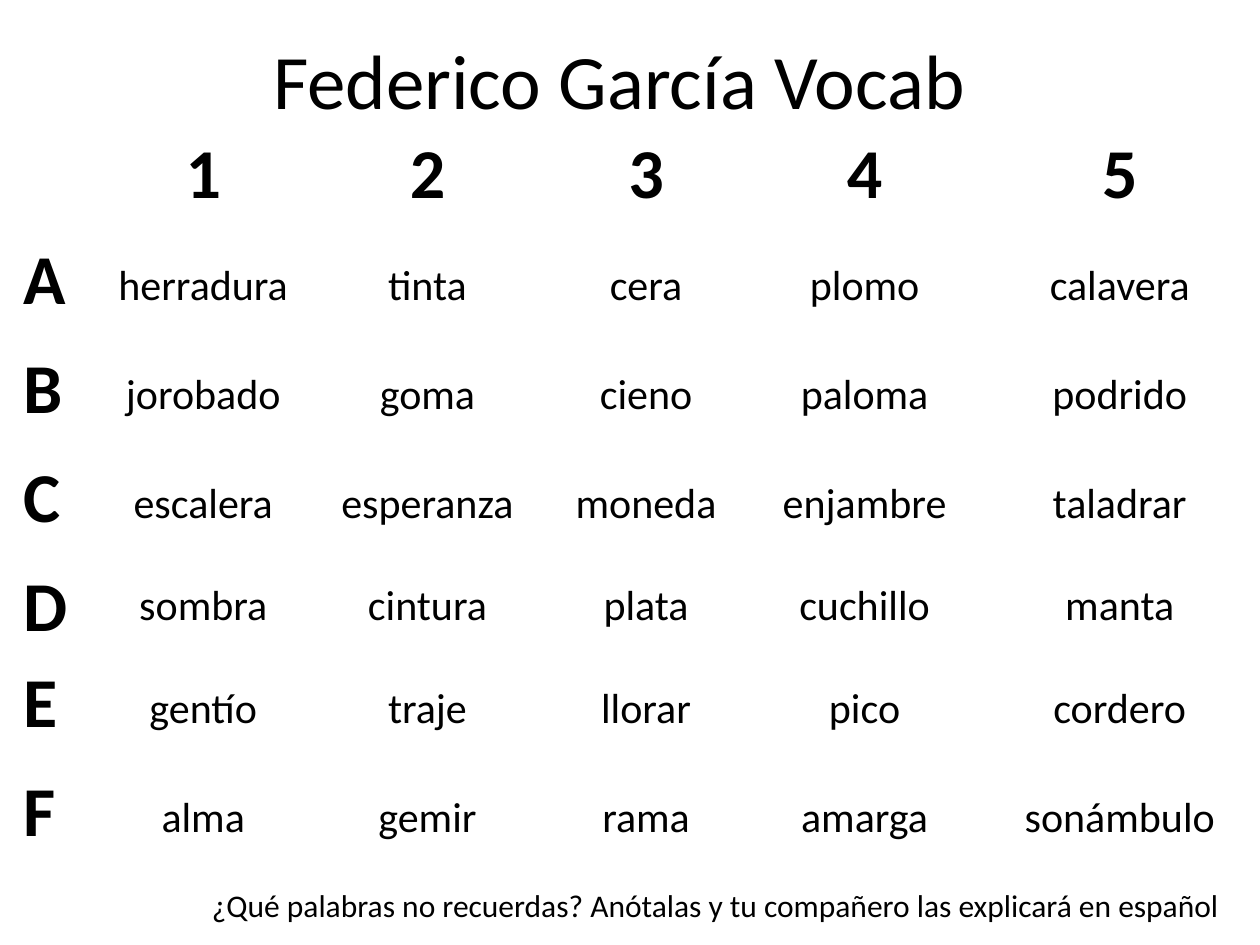
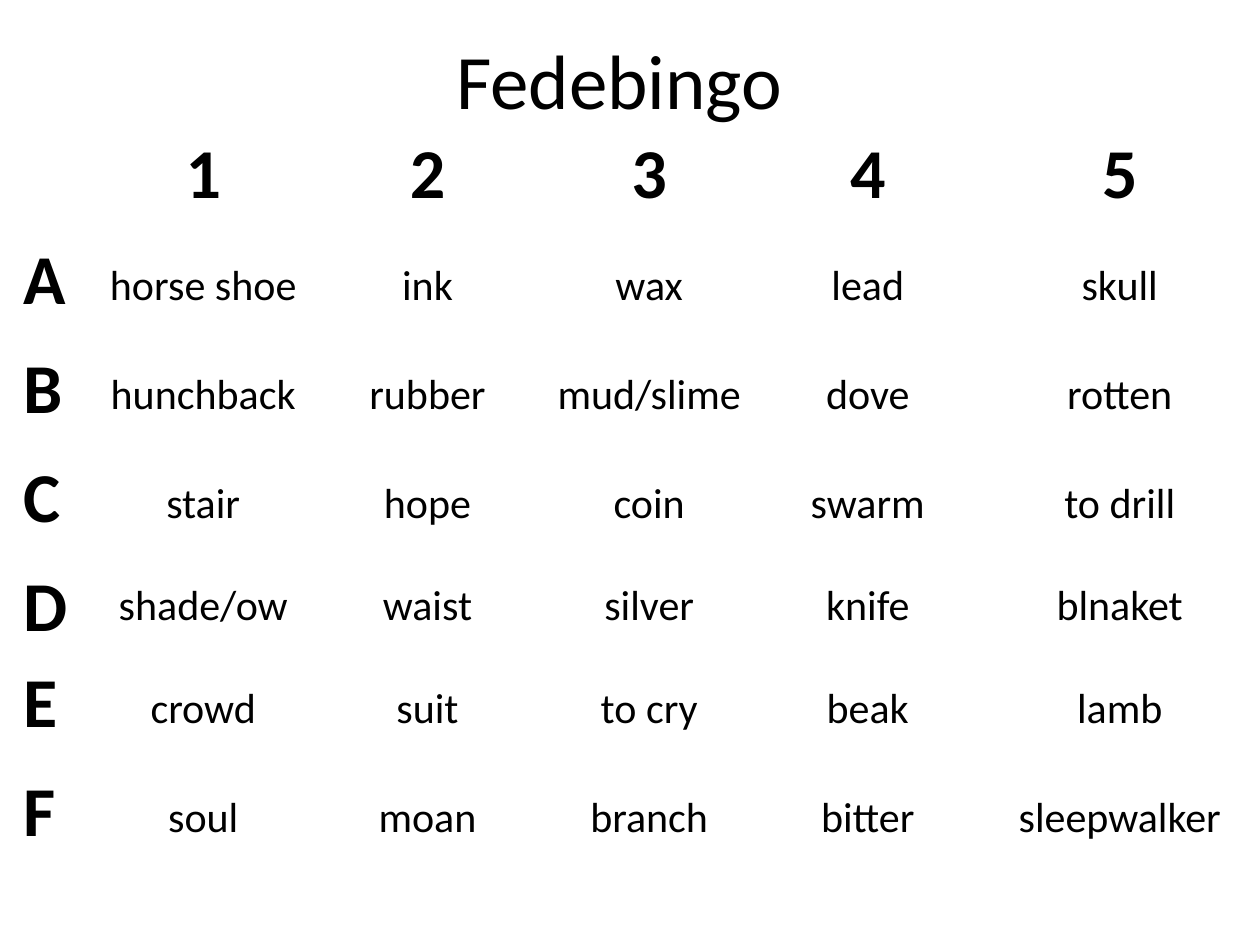
from pptx import Presentation
from pptx.dml.color import RGBColor
from pptx.enum import text
from pptx.util import Pt

COLORS = {"ink": "000000"}
FONT = "Calibri"
CENTER, LEFT = text.PP_ALIGN.CENTER, text.PP_ALIGN.LEFT
MIDDLE, TOP = text.MSO_ANCHOR.MIDDLE, text.MSO_ANCHOR.TOP

FORMATS = {
    "title": {"size": Pt(44), "bold": False},
    "heading": {"size": Pt(40), "bold": True},
    "word": {"size": Pt(24), "bold": False},
    "prompt": {"size": Pt(18), "bold": False},
}
ROW_HEIGHTS = [60.5, 62.2, 62.2, 62.2, 48.2, 62.2, 62.2]

BOARDS = [
    {
        "title": "Federico García Vocab",
        "widths": [47.5, 125.3, 131, 118.8, 131, 160.6],
        "words": [
            ["herradura", "tinta", "cera", "plomo", "calavera"],
            ["jorobado", "goma", "cieno", "paloma", "podrido"],
            ["escalera", "esperanza", "moneda", "enjambre", "taladrar"],
            ["sombra", "cintura", "plata", "cuchillo", "manta"],
            ["gentío", "traje", "llorar", "pico", "cordero"],
            ["alma", "gemir", "rama", "amarga", "sonámbulo"],
        ],
        "prompt": "¿Qué palabras no recuerdas? Anótalas y tu compañero las explicará en español",
    },
    {
        "title": "Fedebingo",
        "widths": [47.5, 125.3, 131, 122.4, 127.4, 160.6],
        "words": [
            ["horse shoe", "ink", "wax", "lead", "skull"],
            ["hunchback", "rubber", "mud/slime", "dove", "rotten"],
            ["stair", "hope", "coin", "swarm", "to drill"],
            ["shade/ow", "waist", "silver", "knife", "blnaket"],
            ["crowd", "suit", "to cry", "beak", "lamb"],
            ["soul", "moan", "branch", "bitter", "sleepwalker"],
        ],
        "prompt": None,
    },
]


def write(tf, content, style, align):
    p = tf.paragraphs[0]
    p.alignment = align
    r = p.add_run()
    r.text = content
    r.font.name = FONT
    r.font.color.rgb = RGBColor.from_string(COLORS["ink"])
    for name, value in FORMATS[style].items():
        setattr(r.font, name, value)


def add_label(s, box, content, style, align, anchor):
    tf = s.shapes.add_textbox(*[Pt(v) for v in box]).text_frame
    tf.word_wrap = True
    tf.vertical_anchor = anchor
    write(tf, content, style, align)


prs = Presentation()
prs.slide_width, prs.slide_height = Pt(720), Pt(540)

for board in BOARDS:
    s = prs.slides.add_slide(prs.slide_layouts[6])
    add_label(s, (30, 0, 648, 90), board["title"], "title", CENTER, MIDDLE)

    rows = [["", "1", "2", "3", "4", "5"]]
    rows += [[letter, *words] for letter, words in zip("ABCDEF", board["words"])]
    table = s.shapes.add_table(
        len(rows), len(rows[0]), Pt(6), Pt(72),
        Pt(sum(board["widths"])), Pt(sum(ROW_HEIGHTS))).table
    table.first_row = table.horz_banding = False
    for column, width in zip(table.columns, board["widths"]):
        column.width = Pt(width)
    for row, height in zip(table.rows, ROW_HEIGHTS):
        row.height = Pt(height)

    for i, row in enumerate(rows):
        for j, content in enumerate(row):
            cell = table.cell(i, j)
            cell.fill.background()
            is_word = i > 0 and j > 0
            cell.vertical_anchor = MIDDLE if is_word else TOP
            if content:
                write(cell.text_frame, content, "word" if is_word else "heading",
                      CENTER if j else LEFT)

    if board["prompt"]:
        add_label(s, (114, 502.5, 606, 29), board["prompt"], "prompt", LEFT, TOP)

prs.save("out.pptx")
